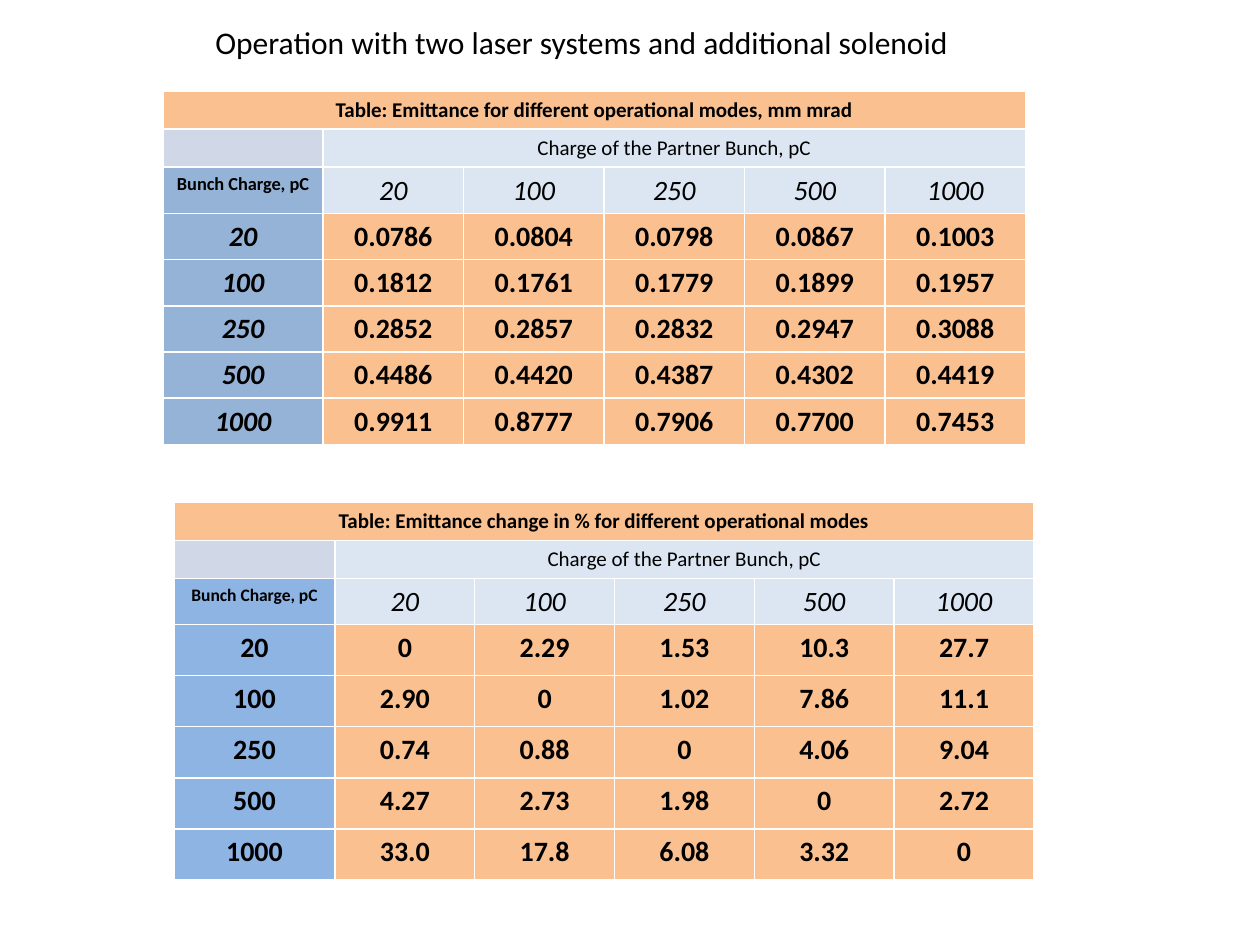
from dataclasses import dataclass

from pptx import Presentation
from pptx.dml.color import RGBColor
from pptx.enum import text
from pptx.util import Pt


@dataclass(frozen=True)
class Theme:
    font: str = "Calibri"
    ink: str = "000000"
    orange: str = "FAC090"
    corner: str = "D0D8E8"
    header: str = "DCE6F2"
    heading_size: float = 18
    caption_size: float = 12
    value_size: float = 16


theme = Theme()


def add_text(para, words, size, bold=False, italic=False):
    span = para.add_run()
    span.text = words
    span.font.name = theme.font
    span.font.size = Pt(size)
    span.font.bold = bold
    span.font.italic = italic
    span.font.color.rgb = RGBColor.from_string(theme.ink)


def fill_cell(cell, color, words, size, bold=False, italic=False):
    cell.fill.solid()
    cell.fill.fore_color.rgb = RGBColor.from_string(color)
    para = cell.text_frame.paragraphs[0]
    para.alignment = text.PP_ALIGN.CENTER
    if words:
        add_text(para, words, size, bold, italic)
    else:
        para._p.get_or_add_endParaRPr().set("sz", str(size * 100))


charges = ["20", "100", "250", "500", "1000"]
emittance = [
    ["0.0786", "0.0804", "0.0798", "0.0867", "0.1003"],
    ["0.1812", "0.1761", "0.1779", "0.1899", "0.1957"],
    ["0.2852", "0.2857", "0.2832", "0.2947", "0.3088"],
    ["0.4486", "0.4420", "0.4387", "0.4302", "0.4419"],
    ["0.9911", "0.8777", "0.7906", "0.7700", "0.7453"],
]
change = [
    ["0", "2.29", "1.53", "10.3", "27.7"],
    ["2.90", "0", "1.02", "7.86", "11.1"],
    ["0.74", "0.88", "0", "4.06", "9.04"],
    ["4.27", "2.73", "1.98", "0", "2.72"],
    ["33.0", "17.8", "6.08", "3.32", "0"],
]
tables = [
    dict(caption="Table: Emittance for different operational modes, mm mrad",
         values=emittance, left=93.2, top=52.2, label_width=91.4, value_width=80.3,
         heights=[18.7, 18.7, 23] + [25.2] * 5,
         label_color="95B3D7", label_size=10.5, label_italic=True),
    dict(caption="Table: Emittance change in % for different operational modes",
         values=change, left=99.4, top=287.2, label_width=92, value_width=79.9,
         heights=[14.4] * 3 + [29.2] * 5,
         label_color="8EB4E3", label_size=10, label_italic=False),
]

deck = Presentation()
deck.slide_width, deck.slide_height = Pt(720), Pt(540)
page = deck.slides.add_slide(deck.slide_layouts[6])

box = page.shapes.add_textbox(Pt(116), Pt(9.4), Pt(438.5), Pt(29))
box.text_frame.word_wrap = False
box.text_frame.auto_size = text.MSO_AUTO_SIZE.SHAPE_TO_FIT_TEXT
add_text(box.text_frame.paragraphs[0],
         "Operation with two laser systems and additional solenoid", theme.heading_size)

for plan in tables:
    widths = [plan["label_width"]] + [plan["value_width"]] * len(charges)
    heights = plan["heights"]
    frame = page.shapes.add_table(len(heights), len(widths), Pt(plan["left"]), Pt(plan["top"]),
                                  Pt(sum(widths)), Pt(sum(heights)))
    grid = frame.table
    for column, width in zip(grid.columns, widths):
        column.width = Pt(width)
    for row, height in zip(grid.rows, heights):
        row.height = Pt(height)

    grid.cell(0, 0).merge(grid.cell(0, 5))
    grid.cell(1, 1).merge(grid.cell(1, 5))
    for column in range(1, 6):
        fill_cell(grid.cell(0, column), theme.orange, "", theme.caption_size)
    for column in range(2, 6):
        fill_cell(grid.cell(1, column), theme.header, "", theme.caption_size)

    fill_cell(grid.cell(0, 0), theme.orange, plan["caption"], theme.caption_size, bold=True)
    fill_cell(grid.cell(1, 0), theme.corner, "", theme.caption_size)
    fill_cell(grid.cell(1, 1), theme.header, "Charge of the Partner Bunch, pC", theme.caption_size)
    fill_cell(grid.cell(2, 0), plan["label_color"], "Bunch Charge, pC",
              plan["label_size"], bold=True)
    for column, charge in enumerate(charges, 1):
        fill_cell(grid.cell(2, column), theme.header, charge, theme.value_size, italic=True)

    for row, (charge, values) in enumerate(zip(charges, plan["values"]), 3):
        fill_cell(grid.cell(row, 0), plan["label_color"], charge, theme.value_size,
                  bold=True, italic=plan["label_italic"])
        for column, value in enumerate(values, 1):
            fill_cell(grid.cell(row, column), theme.orange, value, theme.value_size, bold=True)

deck.save("out.pptx")
